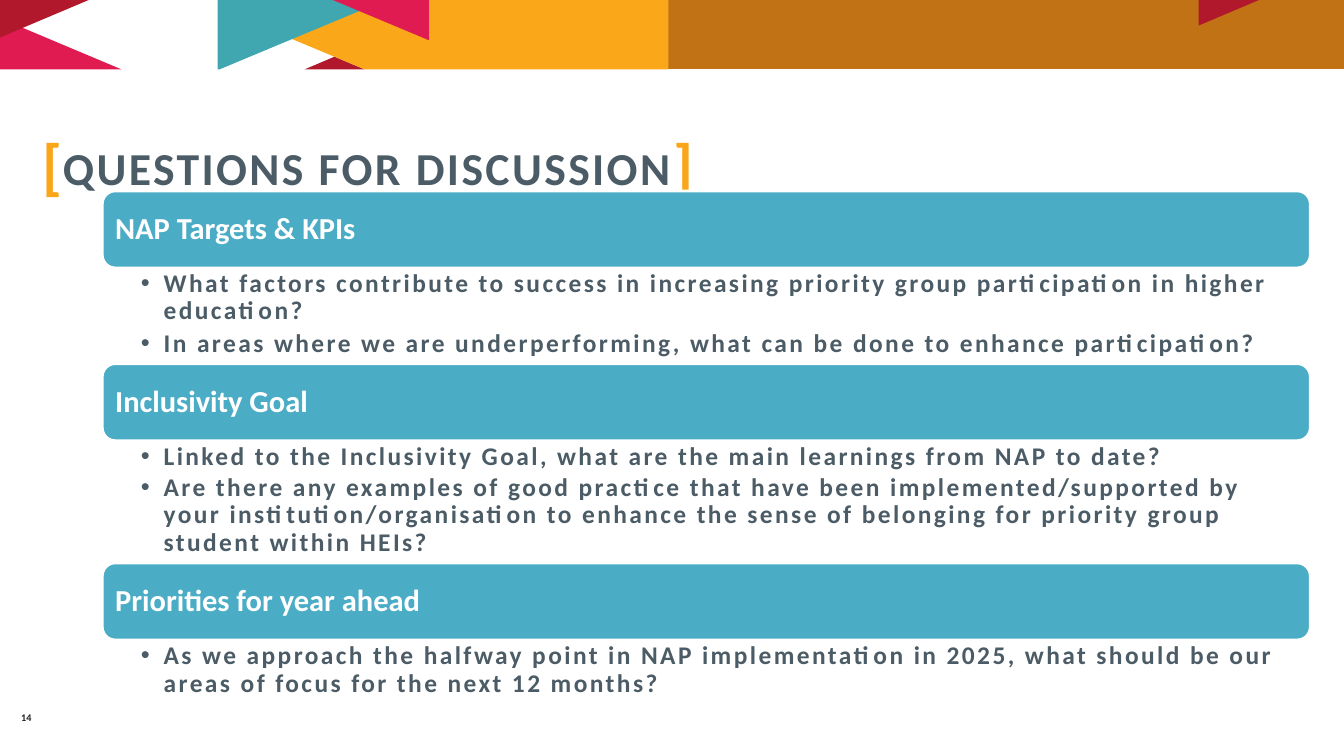
from lxml import etree
from pptx import Presentation
from pptx import util as u
from pptx.dml.color import RGBColor
from pptx.enum import shapes, text
from pptx.oxml.ns import qn

In, Pt = u.Inches, u.Pt


def rgb(color):
    return RGBColor.from_string(color)


def add_run(p, content, size, color, spacing=0, baseline=None):
    r = p.add_run()
    r.text = content
    for name, value in dict(name="Calibri", size=Pt(size), bold=True).items():
        setattr(r.font, name, value)
    r.font.color.rgb = rgb(color)
    rPr = r._r.get_or_add_rPr()
    rPr.set("spc", str(round(spacing * 100)))
    if baseline is not None:
        rPr.set("baseline", str(baseline))


SLATE, AMBER, TEAL, CRIMSON, PINK = "4B5C66", "FAA819", "40A6B0", "B1182C", "DF1B51"
BAND_BLUE, WHITE = "4BACC6", "FFFFFF"

prs = Presentation()
prs.slide_width, prs.slide_height = In(14.7), In(8.27)
s = prs.slides.add_slide(prs.slide_layouts[4])

# Header pattern, back to front
header = [
    ("C17214", [(7.31, 0), (14.7, 0), (14.7, 0.76), (7.31, 0.76)]),
    (CRIMSON, [(13.77, 0), (13.11, 0), (13.11, 0.28)]),
    (PINK, [(0, 0.2), (0, 0.76), (1.33, 0.76)]),
    (CRIMSON, [(3.66, 0.62), (3.33, 0.76), (3.99, 0.76)]),
    (AMBER, [(7.31, 0), (2.58, 0), (2.58, 0.17), (3.99, 0.76), (7.31, 0.76)]),
    (TEAL, [(4.22, 0), (2.38, 0), (2.38, 0.76), (2.4, 0.76)]),
    (PINK, [(4.69, 0), (3.64, 0), (4.69, 0.44)]),
    (CRIMSON, [(0.97, 0), (0, 0), (0, 0.41)]),
]
for color, points in header:
    points = [(In(x), In(y)) for x, y in points]
    fb = s.shapes.build_freeform(*points[0])
    fb.add_line_segments(points[1:], close=True)
    sp = fb.convert_to_shape()
    sp.shadow.inherit = False
    sp.fill.solid()
    sp.fill.fore_color.rgb = rgb(color)
    sp.line.fill.background()

# Title in brackets
title = s.shapes.title
title.left, title.top, title.width, title.height = In(0.46), In(0.85), In(10.95), In(0.96)
tf = title.text_frame
frame = dict(margin_left=0, margin_right=0, margin_top=In(0.01), margin_bottom=0, word_wrap=True,
             auto_size=text.MSO_AUTO_SIZE.NONE, vertical_anchor=text.MSO_ANCHOR.TOP)
for name, value in frame.items():
    setattr(tf, name, value)
p = tf.paragraphs[0]
p.alignment = text.PP_ALIGN.LEFT
add_run(p, "[", 84, "FAA61A", 0.6, -3000)
add_run(p, "QUESTIONS FOR DISCUSSION", 36, SLATE, 1.9, 0)
add_run(p, "]", 84, "FAA61A", 1.6, -3000)

# Topics: band, list height, space after each question, questions
topics = [
    ("NAP Targets & KPIs", 1.05, 4, [
        "What factors contribute to success in increasing priority group participation in higher education?",
        "In areas where we are underperforming, what can be done to enhance participation?"]),
    ("Inclusivity Goal", 1.34, 3, [
        "Linked to the Inclusivity Goal, what are the main learnings from NAP to date?",
        "Are there any examples of good practice that have been implemented/supported by your "
        "institution/organisation to enhance the sense of belonging for priority group student within HEIs?"]),
    ("Priorities for year ahead", 0.74, 3, [
        "As we approach the halfway point in NAP implementation in 2025, what should be our areas "
        "of focus for the next 12 months?"]),
]
left, top, width, band_height = 1.12, 2.09, 13.21, 0.84
bodies = [sp for sp in s.placeholders if sp.placeholder_format.idx]
for (heading, list_height, gap, questions), body in zip(topics, bodies):
    band = s.shapes.add_shape(shapes.MSO_SHAPE.ROUNDED_RECTANGLE,
                              In(left), In(top), In(width), In(band_height))
    band.shadow.inherit = False
    band.fill.solid()
    band.fill.fore_color.rgb = rgb(BAND_BLUE)
    band.line.color.rgb = rgb(WHITE)
    band.line.width = Pt(2)
    tf = band.text_frame
    tf.margin_left = tf.margin_right = In(0.1)
    tf.vertical_anchor = text.MSO_ANCHOR.MIDDLE
    p = tf.paragraphs[0]
    p.alignment = text.PP_ALIGN.LEFT
    p.line_spacing = 0.9
    add_run(p, heading, 24, WHITE)
    top += band_height

    body.left, body.top, body.width, body.height = In(left), In(top), In(width), In(list_height)
    tf = body.text_frame
    insets = dict(margin_left=In(0.42), margin_right=In(0.16), margin_top=In(0.03), margin_bottom=In(0.03))
    for name, value in {**frame, **insets}.items():
        setattr(tf, name, value)
    for i, question in enumerate(questions):
        p = tf.add_paragraph() if i else tf.paragraphs[0]
        pPr = p._p.get_or_add_pPr()
        pPr.set("marL", str(In(0.25)))
        pPr.set("indent", str(-In(0.25)))
        etree.SubElement(pPr, qn("a:buFont")).set("typeface", "Arial")
        etree.SubElement(pPr, qn("a:buChar")).set("char", "•")
        layout = dict(alignment=text.PP_ALIGN.LEFT, line_spacing=0.9, space_before=Pt(0), space_after=Pt(gap))
        for name, value in layout.items():
            setattr(p, name, value)
        add_run(p, question, 20, SLATE, 1.9)
    top += list_height

# Unused placeholder
for body in bodies[len(topics):]:
    body._element.getparent().remove(body._element)

# Page number
tb = s.shapes.add_textbox(In(0.19), In(7.78), In(0.27), In(0.13))
tf = tb.text_frame
for name, value in {**frame, "margin_left": In(0.04), "margin_top": 0}.items():
    setattr(tf, name, value)
add_run(tf.paragraphs[0], "14", 8, "231F20", 0.1)

prs.save("out.pptx")
